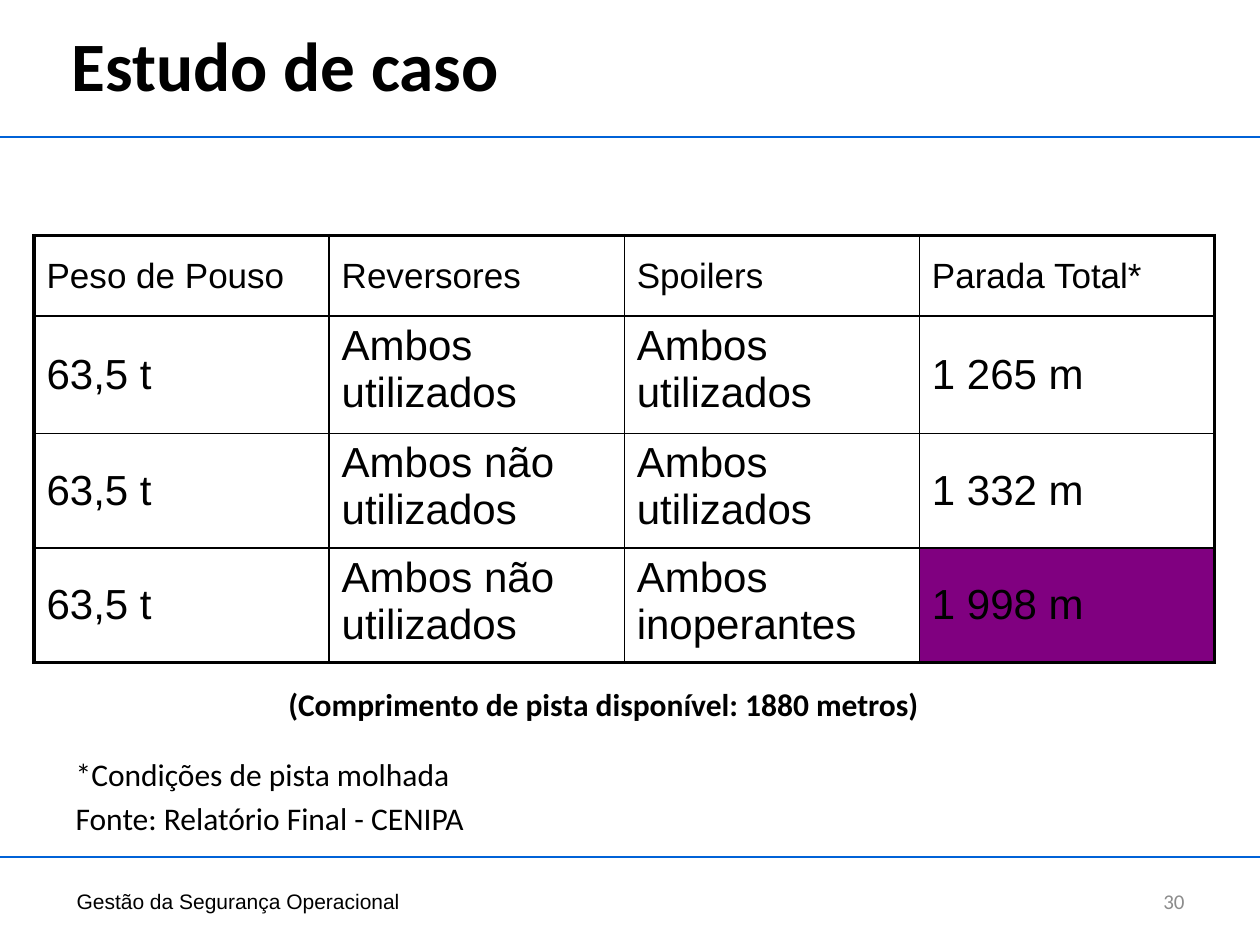
import pptx
import pptx.dml.color
import pptx.enum.shapes
import pptx.enum.text
import pptx.oxml
import pptx.oxml.ns
import pptx.util
from lxml import etree

PX = 9144  # 100 px to the inch
ALIGN = pptx.enum.text.PP_ALIGN
ANCHOR = pptx.enum.text.MSO_ANCHOR
BLACK = "000000"
RULE_BLUE = "0062D7"
HIGHLIGHT = "800080"

HEADER = ["Peso de Pouso", "Reversores", "Spoilers", "Parada Total*"]
LANDINGS = [
    ["63,5 t", "Ambos utilizados", "Ambos utilizados", "1 265 m"],
    ["63,5 t", "Ambos não utilizados", "Ambos utilizados", "1 332 m"],
    ["63,5 t", "Ambos não utilizados", "Ambos inoperantes", "1 998 m"],
]


def px(*lengths):
    return [pptx.util.Emu(length * PX) for length in lengths]


def color(hex_string):
    return pptx.dml.color.RGBColor.from_string(hex_string)


def write(frame, *lines, size=18, font="Calibri", fill=BLACK, bold=False,
          align=ALIGN.LEFT, anchor=ANCHOR.TOP, before=0, hanging=0):
    """Fill a text frame or cell frame with one paragraph per line."""
    frame.vertical_anchor = anchor
    for index, line in enumerate(lines):
        paragraph = frame.paragraphs[0] if index == 0 else frame.add_paragraph()
        paragraph.alignment = align
        paragraph.space_before = pptx.util.Pt(before)
        if hanging:
            properties = paragraph._p.get_or_add_pPr()
            properties.set("marL", str(hanging * PX))
            properties.set("indent", str(-hanging * PX))
            etree.SubElement(properties, pptx.oxml.ns.qn("a:buNone"))
        run = paragraph.add_run()
        run.text = line
        run.font.size = pptx.util.Pt(size)
        run.font.name = font
        run.font.bold = bold
        run.font.color.rgb = color(fill)


def place_placeholder(placeholder, box, *lines, **text_format):
    placeholder.left, placeholder.top, placeholder.width, placeholder.height = px(*box)
    placeholder.text_frame.auto_size = pptx.enum.text.MSO_AUTO_SIZE.NONE
    write(placeholder.text_frame, *lines, **text_format)


def add_text(slide, box, text, wrap=True, **text_format):
    frame = slide.shapes.add_textbox(*px(*box)).text_frame
    frame.word_wrap = wrap
    write(frame, text, **text_format)


def add_rule(slide, left, top, width):
    rule = slide.shapes.add_connector(
        pptx.enum.shapes.MSO_CONNECTOR.STRAIGHT, *px(left, top, left + width, top))
    rule.line.color.rgb = color(RULE_BLUE)
    rule.line.width = pptx.util.Pt(1.25)
    etree.SubElement(rule._element.spPr, pptx.oxml.ns.qn("a:effectLst"))


def set_borders(cell, widths):
    """Draw the sides in the order left, right, top, bottom, before the fill."""
    properties = cell._tc.get_or_add_tcPr()
    for index, (side, width) in enumerate(zip("LRTB", widths)):
        properties.insert(index, pptx.oxml.parse_xml(
            f'<a:ln{side} {pptx.oxml.ns.nsdecls("a")} w="{pptx.util.Pt(width)}">'
            f'<a:solidFill><a:srgbClr val="{BLACK}"/></a:solidFill></a:ln{side}>'))


def add_landing_table(slide, box, row_heights):
    rows = [HEADER] + LANDINGS
    last_row, last_column = len(rows) - 1, len(HEADER) - 1
    table = slide.shapes.add_table(len(rows), len(HEADER), *px(*box)).table
    table.first_row = table.horz_banding = False
    for row, height in zip(table.rows, px(*row_heights)):
        row.height = height
    for r, values in enumerate(rows):
        for c, value in enumerate(values):
            cell = table.cell(r, c)
            if (r, c) == (last_row, last_column):
                cell.fill.solid()
                cell.fill.fore_color.rgb = color(HIGHLIGHT)
            else:
                cell.fill.background()
            centred = r == 0 or c in (0, last_column)
            write(cell.text_frame, value, size=24 if r else 20, font="Arial")
            cell.vertical_anchor = ANCHOR.MIDDLE if centred else ANCHOR.TOP
            outer_sides = (c == 0, c == last_column, r == 0, r == last_row)
            set_borders(cell, [2.25 if outer else 1 for outer in outer_sides])


def add_header(slide, left, top, width):
    place_placeholder(slide.shapes.title, (left + 47, top + 16, 900, 70),
                      "Estudo de caso", size=39.6, bold=True, anchor=ANCHOR.MIDDLE)
    add_rule(slide, left, top + 109, width)


def add_notes_below_table(slide, left, top):
    add_text(slide, (left + 169, top, 524, 40),
             "(Comprimento de pista disponível: 1880 metros)", wrap=False, bold=True)
    place_placeholder(slide.placeholders[1], (left, top + 55, 900, 86),
                      "*Condições de pista molhada", "Fonte: Relatório Final - CENIPA",
                      before=3.6, hanging=38)


def add_footer(slide, left, top, width):
    add_rule(slide, left, top, width)
    add_text(slide, (left + 51, top + 15, 317, 40), "Gestão da Segurança Operacional",
             size=12, font="Arial", anchor=ANCHOR.MIDDLE)
    add_text(slide, (left + width - 283, top + 15, 233, 40), "30", size=12,
             fill="8C8C8C", align=ALIGN.RIGHT, anchor=ANCHOR.MIDDLE)


def main():
    presentation = pptx.Presentation()
    presentation.slide_width, presentation.slide_height = px(1000, 750)
    slide = presentation.slides.add_slide(presentation.slide_layouts[1])
    add_header(slide, 0, 0, 1000)
    add_landing_table(slide, (27, 187, 937, 339), (64, 93, 91, 91))
    add_notes_below_table(slide, 50, 539)
    add_footer(slide, 0, 680, 1000)
    presentation.save("out.pptx")


if __name__ == "__main__":
    main()
